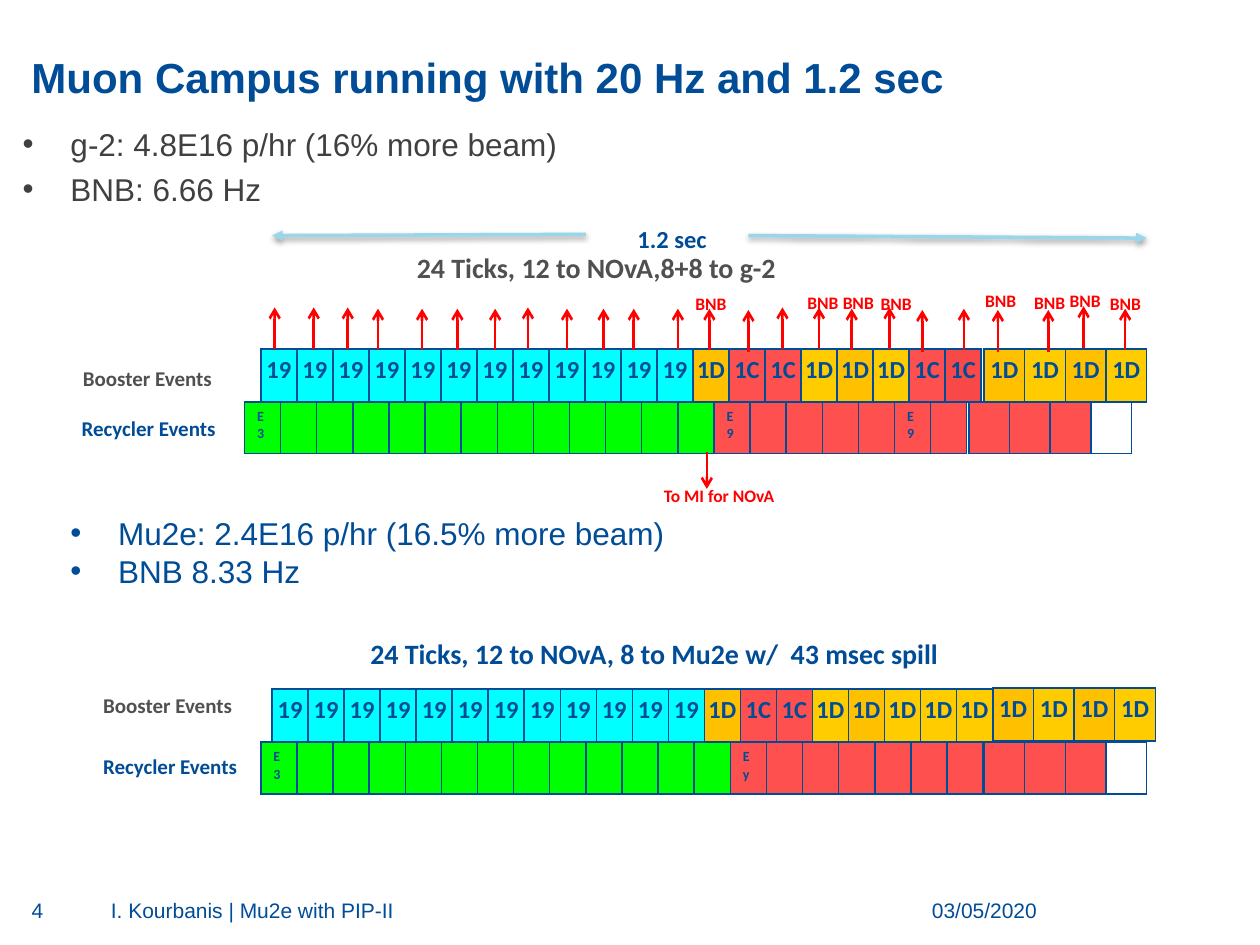
from lxml import etree
from pptx import Presentation, util as u
from pptx.dml.color import RGBColor
from pptx.enum import shapes, text
from pptx.oxml import parse_xml
from pptx.oxml.ns import nsdecls, qn

COLORS = {
    "navy": "004C97", "dark": "404040", "gray": "505050", "red": "FF0000",
    "sky": "99D6EA", "cyan": "00FFFF", "green": "00FF00", "coral": "FF5050",
    "crimson": "F94848", "amber": "FFC000", "gold": "FFCC00",
}
TITLE = {"name": "Arial", "size": u.Pt(24), "bold": True}
BODY = {"name": "Arial", "size": u.Pt(18)}
FOOTER = {"name": "Arial", "size": u.Pt(12)}
CAPTION = {"name": "Calibri", "size": u.Pt(16), "bold": True}
EVENT = {"name": "Calibri", "size": u.Pt(14), "bold": True}
ROW_LABEL = {"name": "Calibri", "size": u.Pt(12), "bold": True}
MARK = {"name": "Calibri", "size": u.Pt(10), "bold": True}
TINY = {"name": "Calibri", "size": u.Pt(8), "bold": True}

NARROW, WIDE = 0.287, 0.3225  # tick widths

# Each run of ticks: label, fill, count
AMBER, GOLD = ("1D", "amber", 1), ("1D", "gold", 1)
NOVA_RUN = [("19", "cyan", 12), AMBER, ("1C", "coral", 2), GOLD, AMBER, GOLD]
G2_BOOSTER = NOVA_RUN + [("1C", "coral", 1), ("1C", "crimson", 1)]
MU2E_BOOSTER = NOVA_RUN + [GOLD, GOLD]
LAST_BOOSTER = [AMBER, GOLD, AMBER, GOLD]
RECYCLER_START = [("E3", "green", 1), ("", "green", 12)]
G2_RECYCLER = RECYCLER_START + [("E9", "coral", 1), ("", "coral", 4),
                                ("E9", "coral", 1), ("", "coral", 1)]
MU2E_RECYCLER = RECYCLER_START + [("Ey", "coral", 1), ("", "coral", 6)]
LAST_RECYCLER = [("", "coral", 3), ("", None, 1)]

# Arrow positions measured from the left and top of the g-2 timeline
ARROWS = [(0.24, 0.9), (0.55, 0.9), (0.82, 0.9), (1.06, 0.91), (1.41, 0.91),
          (1.69, 0.91), (1.99, 0.91), (2.25, 0.9), (2.56, 0.91), (2.85, 0.91),
          (3.09, 0.91), (3.44, 0.91), (3.69, 0.91), (4, 0.92), (4.27, 0.9),
          (4.56, 0.9), (4.82, 0.91), (5.12, 0.9), (5.38, 0.92), (5.71, 0.91),
          (5.98, 0.92), (6.38, 0.92), (6.66, 0.89), (6.99, 0.91)]
BNB_LABELS = [(4.37, 0.4), (4.95, 0.41), (4.65, 0.4), (5.78, 0.38),
              (6.45, 0.38), (6.17, 0.4), (3.48, 0.41), (6.77, 0.41)]


def rgb(name):
    return RGBColor.from_string(COLORS[name])


def style(paragraph, font, color):
    for key, value in font.items():
        setattr(paragraph.font, key, value)
    paragraph.font.color.rgb = rgb(color)


def add_text(slide, box, lines, font, color, inset=True, wrap=True,
             bullet=False, gap=0, **layout):
    frame = slide.shapes.add_textbox(*map(u.Inches, box)).text_frame
    frame.word_wrap = wrap
    frame.vertical_anchor = layout.get("anchor", text.MSO_ANCHOR.TOP)
    if not inset:
        for side in ("left", "top", "right", "bottom"):
            setattr(frame, f"margin_{side}", 0)
    for index, line in enumerate(lines):
        paragraph = frame.add_paragraph() if index else frame.paragraphs[0]
        paragraph.text = line
        paragraph.alignment = layout.get("align", text.PP_ALIGN.LEFT)
        if index and gap:
            paragraph.space_before = u.Pt(gap)
        if bullet:
            properties = paragraph._p.get_or_add_pPr()
            properties.set("marL", str(u.Inches(0.38)))
            properties.set("indent", str(u.Inches(-0.38)))
            etree.SubElement(properties, qn("a:buFont"), typeface="Arial")
            etree.SubElement(properties, qn("a:buChar"), char="•")
        style(paragraph, font, color)


def add_arrow(slide, start, end, color, width, head, shadow=False):
    line = slide.shapes.add_connector(
        shapes.MSO_CONNECTOR.STRAIGHT, *map(u.Inches, (*start, *end)))
    line.line.color.rgb = rgb(color)
    line.line.width = u.Pt(width)
    etree.SubElement(line.line._get_or_add_ln(), qn("a:tailEnd"), type=head)
    effects = etree.SubElement(line._element.spPr, qn("a:effectLst"))
    if shadow:
        effects.append(parse_xml(
            f'<a:outerShdw {nsdecls("a")} blurRad="40000" dist="20000" '
            'dir="5400000" rotWithShape="0"><a:srgbClr val="000000">'
            '<a:alpha val="38000"/></a:srgbClr></a:outerShdw>'))


def add_borders(cell):
    properties = cell._tc.get_or_add_tcPr()
    for index, side in enumerate(("lnL", "lnR", "lnT", "lnB")):
        properties.insert(index, parse_xml(
            f'<a:{side} {nsdecls("a")} w="12700"><a:solidFill>'
            f'<a:srgbClr val="{COLORS["navy"]}"/></a:solidFill></a:{side}>'))


def add_ticks(slide, left, top, height, tick, runs, booster):
    ticks = [(label, fill) for label, fill, count in runs for _ in range(count)]
    table = slide.shapes.add_table(
        1, len(ticks), *map(u.Inches, (left, top, tick * len(ticks), height))).table
    table.first_row = table.horz_banding = False
    for index, (label, fill) in enumerate(ticks):
        table.columns[index].width = u.Inches(tick)
        cell = table.cell(0, index)
        if fill:
            cell.fill.solid()
            cell.fill.fore_color.rgb = rgb(fill)
        else:
            cell.fill.background()
        add_borders(cell)
        cell.text = label
        paragraph = cell.text_frame.paragraphs[0]
        if booster:
            cell.margin_left = cell.margin_right = 0
            paragraph.alignment = text.PP_ALIGN.CENTER
        style(paragraph, EVENT if booster else TINY, "navy")


def add_header(slide, left, top):
    add_text(slide, (left + 0.07, top, 9.5, 0.7),
             ["Muon Campus running with 20 Hz and 1.2 sec"], TITLE, "navy",
             inset=False, anchor=text.MSO_ANCHOR.BOTTOM)
    add_text(slide, (left, top + 0.88, 9.27, 0.81),
             ["g-2: 4.8E16 p/hr (16% more beam)", "BNB: 6.66 Hz"], BODY, "dark",
             inset=False, bullet=True, gap=4)


def add_footer(slide, left, top):
    for offset, width, line, align in (
            (0, 0.49, "4", text.PP_ALIGN.LEFT),
            (0.63, 5.88, "I. Kourbanis | Mu2e with PIP-II", text.PP_ALIGN.LEFT),
            (6.8, 1.18, "03/05/2020", text.PP_ALIGN.RIGHT)):
        add_text(slide, (left + offset, top, width, 0.26), [line], FOOTER,
                 "navy", inset=False, align=align)


def add_g2_timeline(slide, left, top):
    # Booster and recycler rows
    add_ticks(slide, left + 0.13, top + 0.9, 0.42, 0.286, G2_BOOSTER, True)
    add_ticks(slide, left + 5.87, top + 0.9, 0.42, WIDE, LAST_BOOSTER, True)
    add_ticks(slide, left, top + 1.32, 0.41, NARROW, G2_RECYCLER, False)
    add_ticks(slide, left + 5.75, top + 1.32, 0.41, WIDE, LAST_RECYCLER, False)
    add_text(slide, (left - 1.38, top + 0.98, 1.38, 0.3), ["Booster Events"],
             ROW_LABEL, "gray")
    add_text(slide, (left - 1.39, top + 1.38, 1.27, 0.3), ["Recycler Events"],
             ROW_LABEL, "navy")
    add_text(slide, (left + 1.27, top + 0.07, 3.45, 0.37),
             ["24 Ticks, 12 to NOvA,8+8 to g-2"], CAPTION, "gray")
    # Beam arrows
    for x, y in ARROWS:
        add_arrow(slide, (left + x, top + y), (left + x, top + y - 0.33),
                  "red", 1.5, "arrow")
    for x, y in BNB_LABELS:
        add_text(slide, (left + x, top + y, 0.45, 0.27), ["BNB"], MARK, "red",
                 wrap=False)
    add_arrow(slide, (left + 3.67, top + 1.72), (left + 3.67, top + 2.01),
              "red", 1.5, "arrow")
    add_text(slide, (left + 3.23, top + 1.93, 1.14, 0.27), ["To MI for NOvA"],
             MARK, "red")
    # Cycle length
    add_arrow(slide, (left + 4, top), (left + 7.16, top + 0.02),
              "sky", 2, "triangle", shadow=True)
    add_arrow(slide, (left + 2.71, top - 0.01), (left + 0.22, top),
              "sky", 2, "triangle", shadow=True)
    add_text(slide, (left + 3.02, top - 0.14, 0.81, 0.34), ["1.2 sec"],
             EVENT, "navy")


def add_mu2e_timeline(slide, left, top):
    add_text(slide, (left - 1.61, top - 0.97, 9.08, 1.11),
             ["Mu2e: 2.4E16 p/hr (16.5% more beam)", "BNB 8.33 Hz"], BODY, "navy",
             bullet=True)
    add_text(slide, (left + 0.77, top, 5.41, 0.37),
             ["24 Ticks, 12 to NOvA, 8 to Mu2e w/  43 msec spill"], CAPTION, "navy")
    # Booster and recycler rows
    add_ticks(slide, left, top + 0.89, 0.41, NARROW, MU2E_RECYCLER, False)
    add_ticks(slide, left + 5.74, top + 0.89, 0.41, WIDE, LAST_RECYCLER, False)
    add_ticks(slide, left + 0.09, top + 0.47, 0.42, 0.286, MU2E_BOOSTER, True)
    add_ticks(slide, left + 5.81, top + 0.46, 0.42, WIDE, LAST_BOOSTER, True)
    add_text(slide, (left - 1.35, top + 0.45, 1.38, 0.3), ["Booster Events"],
             ROW_LABEL, "gray")
    add_text(slide, (left - 1.35, top + 0.93, 1.27, 0.3), ["Recycler Events"],
             ROW_LABEL, "navy")


def main():
    presentation = Presentation()
    presentation.slide_width, presentation.slide_height = u.Inches(10), u.Inches(7.5)
    slide = presentation.slides.add_slide(presentation.slide_layouts[6])
    add_header(slide, 0.18, 0.11)
    add_g2_timeline(slide, 1.94, 1.87)
    add_mu2e_timeline(slide, 2.07, 5)
    add_footer(slide, 0.25, 7.12)
    presentation.save("out.pptx")


if __name__ == "__main__":
    main()
